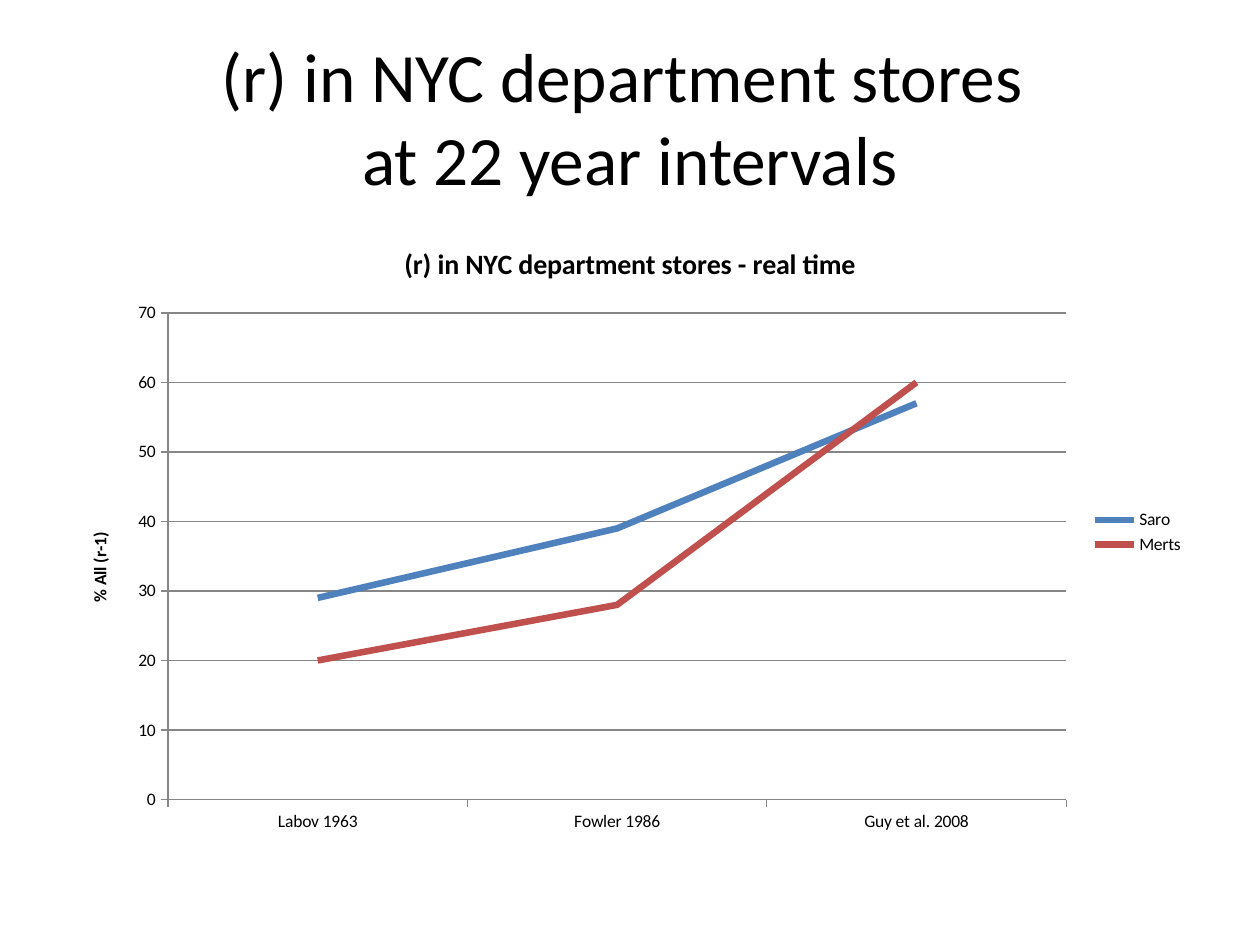
from pptx import Presentation
from pptx.chart.data import CategoryChartData
from pptx.dml.color import RGBColor
from pptx.enum.chart import XL_CHART_TYPE, XL_LEGEND_POSITION, XL_MARKER_STYLE, XL_TICK_MARK
from pptx.enum.text import MSO_ANCHOR, MSO_AUTO_SIZE, PP_ALIGN
from pptx.util import Inches, Pt

LINE = XL_CHART_TYPE.LINE
LEGEND_RIGHT = XL_LEGEND_POSITION.RIGHT
NO_MARKER = XL_MARKER_STYLE.NONE
TICK_OUT, TICK_NONE = XL_TICK_MARK.OUTSIDE, XL_TICK_MARK.NONE
MIDDLE, CENTER, NO_FIT = MSO_ANCHOR.MIDDLE, PP_ALIGN.CENTER, MSO_AUTO_SIZE.NONE

TITLE = "(r) in NYC department stores \vat 22 year intervals"
CHART_TITLE = "(r) in NYC department stores - real time"
VALUE_TITLE = "% All (r-1)"
STUDIES = ["Labov 1963", "Fowler 1986", "Guy et al. 2008"]
STORES = {"Saro": [29, 39, 57], "Merts": [20, 28, 60]}

THEME = {
    "font": "Calibri",
    "text": "000000",
    "axis": "868686",
    "series": ["4F81BD", "C0504D"],
    "title_size": 39.6,
    "chart_title_size": 16,
    "label_size": 10,
    "axis_width": 0.75,
    "series_width": 3.75,
}
TITLE_BOX = (0.5, 0.3, 9, 1.25)
CHART_BOX = (0.5, 1.75, 9, 4.95)


def set_font(font, size, bold=False):
    font.name = THEME["font"]
    font.size = Pt(size)
    font.bold = bold
    font.color.rgb = RGBColor.from_string(THEME["text"])


def set_text(tf, text, size, bold=False):
    p = tf.paragraphs[0]
    p.text = text
    p.alignment = CENTER
    for r in p.runs:
        set_font(r.font, size, bold)


def set_line(line, color, width):
    line.color.rgb = RGBColor.from_string(color)
    line.width = Pt(width)


def add_title(slide):
    sp = slide.shapes.title
    sp.left, sp.top, sp.width, sp.height = map(Inches, TITLE_BOX)
    tf = sp.text_frame
    tf.word_wrap = True
    tf.auto_size = NO_FIT
    tf.vertical_anchor = MIDDLE
    set_text(tf, TITLE, THEME["title_size"])


def add_store_chart(slide):
    data = CategoryChartData()
    data.categories = STUDIES
    for store, values in STORES.items():
        data.add_series(store, values)
    chart = slide.shapes.add_chart(LINE, *map(Inches, CHART_BOX), data).chart
    set_font(chart.font, THEME["label_size"])

    chart.has_title = True
    set_text(chart.chart_title.text_frame, CHART_TITLE, THEME["chart_title_size"], bold=True)
    chart.chart_title.include_in_layout = False
    chart.has_legend = True
    chart.legend.position = LEGEND_RIGHT
    chart.legend.include_in_layout = False

    values = chart.value_axis
    values.minimum_scale, values.maximum_scale, values.major_unit = 0, 70, 10
    values.has_major_gridlines = True
    values.has_title = True
    set_text(values.axis_title.text_frame, VALUE_TITLE, THEME["label_size"], bold=True)
    for axis in (chart.category_axis, values):
        axis.major_tick_mark, axis.minor_tick_mark = TICK_OUT, TICK_NONE
    for part in (chart.category_axis, values, values.major_gridlines):
        set_line(part.format.line, THEME["axis"], THEME["axis_width"])

    plot = chart.plots[0]
    plot.vary_by_categories = False
    for series, color in zip(plot.series, THEME["series"]):
        series.smooth = False
        series.marker.style = NO_MARKER
        set_line(series.format.line, color, THEME["series_width"])


def main():
    prs = Presentation()
    prs.slide_width, prs.slide_height = Inches(10), Inches(7.5)
    slide = prs.slides.add_slide(prs.slide_layouts.get_by_name("Title Only"))
    add_title(slide)
    add_store_chart(slide)
    prs.save("out.pptx")


if __name__ == "__main__":
    main()
